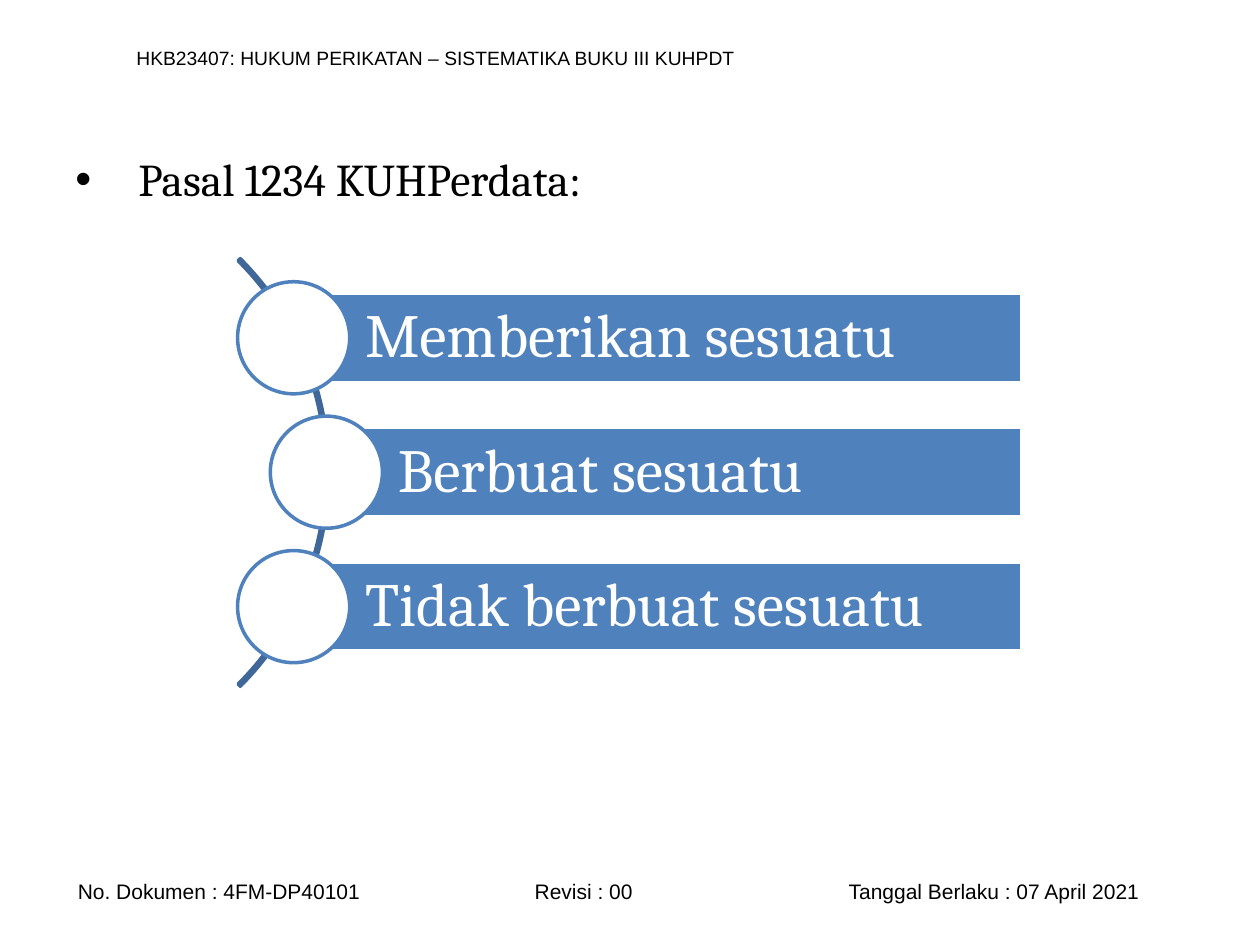
from dataclasses import dataclass

from lxml import etree
from pptx import Presentation
from pptx.dml.color import RGBColor
from pptx.enum.shapes import MSO_SHAPE
from pptx.enum.text import MSO_ANCHOR, PP_ALIGN
from pptx.oxml.ns import qn
from pptx.util import Cm, Pt

ARC = MSO_SHAPE.BLOCK_ARC
RECTANGLE = MSO_SHAPE.RECTANGLE
OVAL = MSO_SHAPE.OVAL
TOP = MSO_ANCHOR.TOP
MIDDLE = MSO_ANCHOR.MIDDLE
LEFT = PP_ALIGN.LEFT
JUSTIFY = PP_ALIGN.JUSTIFY


@dataclass(frozen=True)
class Theme:
    black: RGBColor = RGBColor(0x00, 0x00, 0x00)
    white: RGBColor = RGBColor(0xFF, 0xFF, 0xFF)
    blue: RGBColor = RGBColor(0x4F, 0x81, 0xBD)
    dark_blue: RGBColor = RGBColor(0x3F, 0x67, 0x97)
    plain_font: str = "Arial"
    serif_font: str = "Cambria"
    header_size: Pt = Pt(11)
    footer_size: Pt = Pt(12)
    body_size: Pt = Pt(26)
    label_size: Pt = Pt(35)
    line_width: Pt = Pt(2)


def set_attributes(target, values):
    for name, value in values.items():
        setattr(target, name, value)


class SlideBuilder:
    def __init__(self, slide, theme):
        self.slide = slide
        self.theme = theme

    def fill_text(self, shape, text, font, size, color, frame_format, paragraph_format):
        frame = shape.text_frame
        set_attributes(frame, {"word_wrap": True, **frame_format})
        paragraph = frame.paragraphs[0]
        set_attributes(paragraph, paragraph_format)
        run = paragraph.add_run()
        run.text = text
        set_attributes(run.font, {"name": font, "size": size})
        run.font.color.rgb = color
        return paragraph

    def text(self, box, text, font, size, anchor=MIDDLE, alignment=JUSTIFY, **frame_format):
        shape = self.slide.shapes.add_textbox(*map(Cm, box))
        return self.fill_text(
            shape, text, font, size, self.theme.black,
            {"vertical_anchor": anchor, **frame_format}, {"alignment": alignment},
        )

    def tabbed_text(self, box, parts, stops, font, size, **frame_format):
        paragraph = self.text(box, "\t".join(parts), font, size, **frame_format)
        tabs = etree.SubElement(paragraph._p.get_or_add_pPr(), qn("a:tabLst"))
        for stop in stops:
            etree.SubElement(tabs, qn("a:tab"), pos=str(Cm(stop)), algn="l")

    def bullet_text(self, box, text, font, size, indent):
        paragraph = self.text(box, text, font, size, TOP, LEFT)
        properties = paragraph._p.get_or_add_pPr()
        properties.set("marL", str(Cm(indent)))
        properties.set("indent", str(-Cm(indent)))
        etree.SubElement(properties, qn("a:buFont"), typeface="Arial")
        etree.SubElement(properties, qn("a:buChar"), char="•")

    def shape(self, kind, box, line, fill=None):
        shape = self.slide.shapes.add_shape(kind, *map(Cm, box))
        shape.shadow.inherit = False
        if fill is None:
            shape.fill.background()
        else:
            shape.fill.solid()
            shape.fill.fore_color.rgb = fill
        shape.line.color.rgb = line
        shape.line.width = self.theme.line_width
        return shape

    def arc(self, box, adjustments):
        shape = self.shape(ARC, box, self.theme.dark_blue)
        for index, value in enumerate(adjustments):
            shape.adjustments[index] = value

    def item(self, left, top, right, height, diameter, text):
        theme = self.theme
        bar = self.shape(RECTANGLE, (left, top, right - left, height), theme.white, theme.blue)
        margins = {f"margin_{side}": Cm(0.25) for side in ("top", "right", "bottom")}
        self.fill_text(
            bar, text, theme.serif_font, theme.label_size, theme.white,
            {"vertical_anchor": MIDDLE, "margin_left": Cm(1.44), **margins},
            {"alignment": LEFT, "line_spacing": 0.9},
        )
        circle = (left - diameter / 2, top + (height - diameter) / 2, diameter, diameter)
        self.shape(OVAL, circle, theme.blue, theme.white)


def main():
    presentation = Presentation()
    presentation.slide_width = Cm(25.4)
    presentation.slide_height = Cm(19.05)
    theme = Theme()
    builder = SlideBuilder(presentation.slides.add_slide(presentation.slide_layouts[6]), theme)

    builder.text(
        (2.5, 0.79, 21.2, 0.74),
        "HKB23407: HUKUM PERIKATAN – SISTEMATIKA BUKU III KUHPDT",
        theme.plain_font, theme.header_size,
    )
    builder.tabbed_text(
        (0.5, 17.58, 24, 0.76),
        ("No. Dokumen : 4FM-DP40101", "Revisi : 00", "Tanggal Berlaku : 07 April 2021"),
        (9.21, 15.54), theme.plain_font, theme.footer_size, margin_left=Cm(1.07),
    )
    builder.bullet_text(
        (1.27, 2.92, 11.43, 1.47), "Pasal 1234 KUHPerdata:",
        theme.serif_font, theme.body_size, 1.27,
    )

    builder.arc((-5.56, 3.43, 12.19, 12.19), (189, 27, 0.005))
    items = (
        (5.92, "Memberikan sesuatu"),
        (6.58, "Berbuat sesuatu"),
        (5.92, "Tidak berbuat sesuatu"),
    )
    first_top, pitch = 5.91, 2.71
    for index, (left, text) in enumerate(items):
        builder.item(left, first_top + index * pitch, 20.6, 1.8, 2.26, text)

    presentation.save("out.pptx")


if __name__ == "__main__":
    main()
